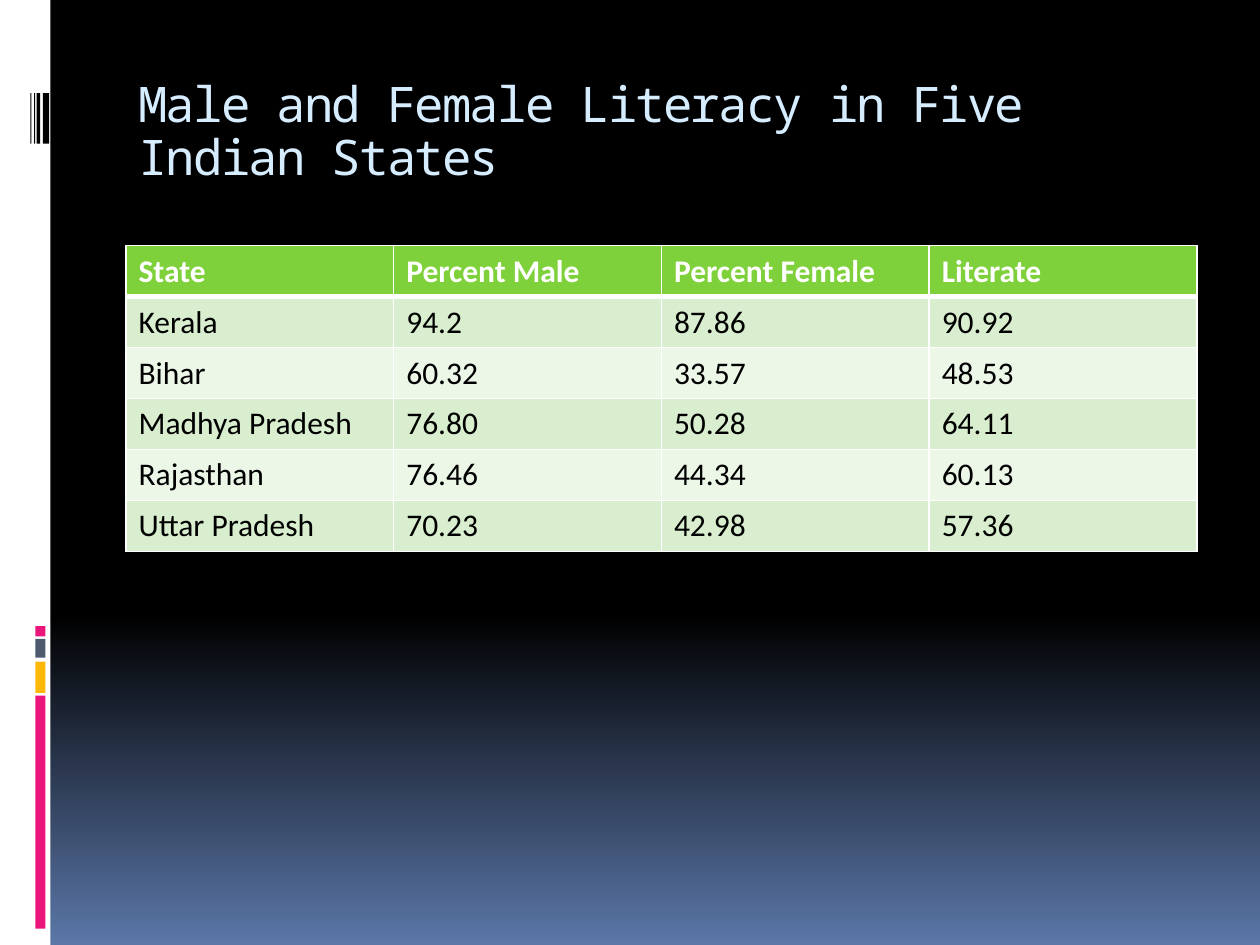
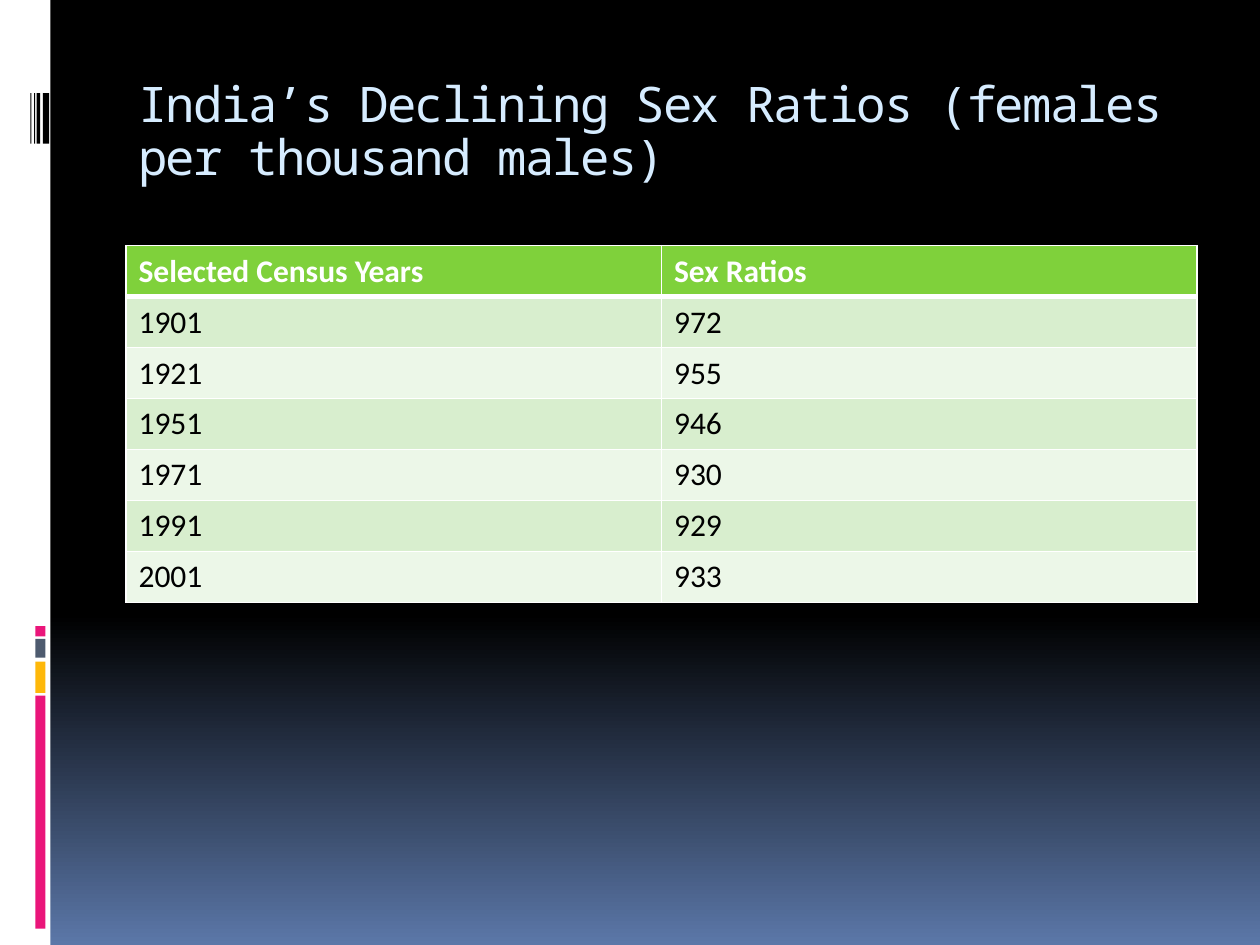
import pptx
import pptx.util
import pptx.dml.color
import pptx.enum.shapes
import pptx.enum.text
import pptx.oxml
import pptx.oxml.ns

RGBColor = pptx.dml.color.RGBColor
BLACK = RGBColor(0x00, 0x00, 0x00)
WHITE = RGBColor(0xFF, 0xFF, 0xFF)
BLUE = RGBColor(0x5B, 0x77, 0xA8)
SKY = RGBColor(0xD6, 0xEC, 0xFF)
PINK = RGBColor(0xEA, 0x15, 0x7A)
GOLD = RGBColor(0xFE, 0xB8, 0x0A)
SLATE = RGBColor(0x4E, 0x5B, 0x6F)
GREEN = RGBColor(0x7F, 0xD1, 0x3B)
PALE = (RGBColor(0xD8, 0xEE, 0xCE), RGBColor(0xEC, 0xF7, 0xE8))

# Grid of 100 columns by 75 rows
UNIT = pptx.util.Inches(0.1)
LEFT, WIDE = 10, 85
ROW = 4.05

# Side marks: top and height in rows; left and width in columns
BARS = [(55.2, 18.5, PINK), (52.5, 2.5, GOLD), (50.7, 1.5, SLATE), (49.7, 0.8, PINK)]
CODE = [(3.4, 0.5), (2.9, 0.3), (2.7, 0.1), (2.4, 0.1)]

STATES = [
    ("State", "Percent Male", "Percent Female", "Literate"),
    ("Kerala", "94.2", "87.86", "90.92"),
    ("Bihar", "60.32", "33.57", "48.53"),
    ("Madhya Pradesh", "76.80", "50.28", "64.11"),
    ("Rajasthan", "76.46", "44.34", "60.13"),
    ("Uttar Pradesh", "70.23", "42.98", "57.36"),
]
RATIOS = [
    ("Selected Census Years", "Sex Ratios"),
    ("1901", "972"),
    ("1921", "955"),
    ("1951", "946"),
    ("1971", "930"),
    ("1991", "929"),
    ("2001", "933"),
]


def grid(*cells):
    return [round(cell * UNIT) for cell in cells]


class Deck:
    head_font = "Noto Sans Mono"
    body_font = "Calibri"

    def __init__(self):
        self.file = pptx.Presentation()
        self.file.slide_width, self.file.slide_height = grid(100, 75)
        self.slide = None

    def page(self, title):
        self.slide = self.file.slides.add_slide(self.file.slide_layouts[6])
        self.back()
        self.side()
        self.title(title)

    def back(self):
        fill = self.slide.background.fill
        fill.gradient()
        fill.gradient_angle = 270
        for stop, place, color in zip(fill.gradient_stops, (0.65, 1), (BLACK, BLUE)):
            stop.position = place
            stop.color.rgb = color

    def side(self):
        self.rect(0, 0, 4, 75, WHITE)
        for top, high, color in BARS:
            self.rect(2.8, top, 0.8, high, color)
        for left, wide in CODE:
            self.rect(left, 7.4, wide, 4, BLACK)

    def rect(self, left, top, wide, high, color):
        kind = pptx.enum.shapes.MSO_SHAPE.RECTANGLE
        shape = self.slide.shapes.add_shape(kind, *grid(left, top, wide, high))
        shape.shadow.inherit = False
        shape.fill.solid()
        shape.fill.fore_color.rgb = color
        shape.line.fill.background()

    def run(self, para, text, font, size, color, bold=False):
        run = para.add_run()
        run.text = text
        run.font.name = font
        run.font.size = pptx.util.Pt(size)
        run.font.color.rgb = color
        run.font.bold = bold
        return run

    def title(self, text):
        box = self.slide.shapes.add_textbox(*grid(LEFT, 5.6, WIDE, 10))
        frame = box.text_frame
        frame.word_wrap = True
        frame.vertical_anchor = pptx.enum.text.MSO_ANCHOR.MIDDLE
        para = frame.paragraphs[0]
        para.line_spacing = 0.9
        run = self.run(para, text, self.head_font, 28, SKY)
        run.font._element.set("spc", "-100")

    def table(self, data):
        rows, cols = len(data), len(data[0])
        place = grid(LEFT, 19.5, WIDE, ROW * rows)
        table = self.slide.shapes.add_table(rows, cols, *place).table
        for col in table.columns:
            col.width = grid(WIDE / cols)[0]
        for r, line in enumerate(data):
            table.rows[r].height = grid(ROW)[0]
            for c, text in enumerate(line):
                self.cell(table.cell(r, c), text, r)

    def cell(self, cell, text, row):
        head = row == 0
        color = WHITE if head else BLACK
        self.run(cell.text_frame.paragraphs[0], text, self.body_font, 18, color, head)
        # Borders come before the fill in the cell's properties
        for side in "LRTB":
            thick = (side == "B" and head) or (side == "T" and row == 1)
            self.edge(cell, side, 3 if thick else 1)
        cell.fill.solid()
        cell.fill.fore_color.rgb = GREEN if head else PALE[(row - 1) % 2]

    def edge(self, cell, side, width):
        props = cell._tc.get_or_add_tcPr()
        props.append(pptx.oxml.parse_xml(
            f'<a:ln{side} {pptx.oxml.ns.nsdecls("a")} w="{pptx.util.Pt(width)}">'
            f'<a:solidFill><a:srgbClr val="{WHITE}"/></a:solidFill></a:ln{side}>'))


def main():
    deck = Deck()
    # Literacy by state
    deck.page("Male and Female Literacy in Five Indian States")
    deck.table(STATES)
    # Sex ratios by census year
    deck.page("India’s Declining Sex Ratios (females per thousand males)")
    deck.table(RATIOS)
    deck.file.save("out.pptx")


if __name__ == "__main__":
    main()
